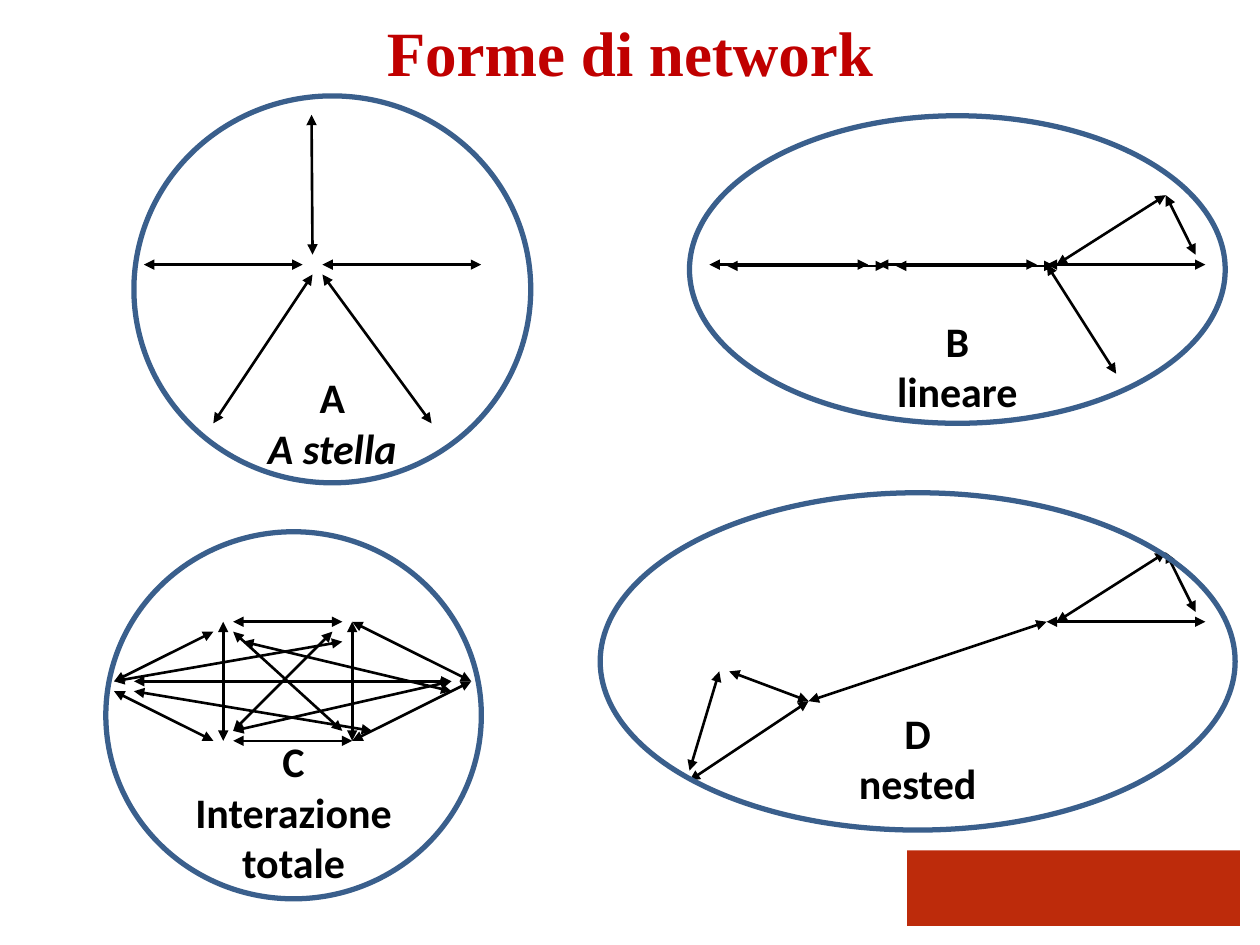
import pptx
import pptx.util
import pptx.dml.color
import pptx.enum.shapes
import pptx.enum.text
import pptx.oxml.ns
from lxml import etree

RGB = pptx.dml.color.RGBColor.from_string
SHAPE = pptx.enum.shapes.MSO_SHAPE
ANCHOR = pptx.enum.text.MSO_ANCHOR
CENTER = pptx.enum.text.PP_ALIGN.CENTER


class Theme:
    title, ring, ink, block = "C00000", "3A5F8C", "000000", "BD2B0B"
    head_font, body_font = "Times New Roman", "Calibri"
    head_size, body_size = 36, 24
    ring_line, arrow_line = 3, 1.5


class Board:
    """A slide on a fine square grid of 127 columns."""
    COLS = 127
    LEFT, TOP = 0.5, -0.33  # grid origin, in cells

    def __init__(self, deck, theme):
        self.theme = theme
        self.slide = deck.slides.add_slide(deck.slide_layouts[5])
        self.shapes = self.slide.shapes
        self.cell = deck.slide_width / self.COLS

    def size(self, cells):
        return round(cells * self.cell)

    def place(self, col, row):
        return self.size(col + self.LEFT), self.size(row + self.TOP)

    def label(self, frame, text, font, size, color):
        frame.text = text
        for par in frame.paragraphs:
            par.alignment = CENTER
            for run in par.runs:
                run.font.name, run.font.size = font, pptx.util.Pt(size)
                run.font.bold = True
                run.font.color.rgb = RGB(color)

    def title(self, text):
        look, box = self.theme, self.shapes.title
        box.left, box.top = pptx.util.Inches(0.5), 0
        box.width, box.height = pptx.util.Inches(9), pptx.util.Inches(0.99)
        frame = box.text_frame
        frame.vertical_anchor = ANCHOR.TOP
        frame.margin_top = pptx.util.Inches(0.11)
        self.label(frame, text, look.head_font, look.head_size, look.title)

    def block(self, col, row, wide, high):
        box = self.shapes.add_shape(SHAPE.RECTANGLE, *self.place(col, row),
                                    self.size(wide), self.size(high))
        box.shadow.inherit = False
        box.fill.solid()
        box.fill.fore_color.rgb = RGB(self.theme.block)
        box.line.fill.background()

    def arrow(self, start, end):
        link = self.shapes.add_connector(
            pptx.enum.shapes.MSO_CONNECTOR.STRAIGHT,
            *self.place(*start), *self.place(*end))
        link.line.color.rgb = RGB(self.theme.ink)
        link.line.width = pptx.util.Pt(self.theme.arrow_line)
        props = link._element.spPr
        stroke = props.find(pptx.oxml.ns.qn("a:ln"))
        for tip in ("a:headEnd", "a:tailEnd"):
            etree.SubElement(stroke, pptx.oxml.ns.qn(tip), type="triangle")
        etree.SubElement(props, pptx.oxml.ns.qn("a:effectLst"))

    def ring(self, col, row, wide, high, text, base):
        """Outline an oval, with its label starting at grid row base."""
        look = self.theme
        oval = self.shapes.add_shape(SHAPE.OVAL, *self.place(col, row),
                                     self.size(wide), self.size(high))
        oval.shadow.inherit = False
        oval.fill.background()
        oval.line.color.rgb = RGB(look.ring)
        oval.line.width = pptx.util.Pt(look.ring_line)
        frame = oval.text_frame
        frame.word_wrap = True
        frame.vertical_anchor = ANCHOR.TOP
        # The text area of an oval starts at 1 - 1/sqrt(2) of its radius
        frame.margin_top = self.size(base - row - high / 2 * (1 - 0.5 ** 0.5))
        frame.margin_bottom = 0
        self.label(frame, text, look.body_font, look.body_size, look.ink)
        return frame


# Arrows as (column, row) pairs
STAR = [((14, 27), (30, 27)), ((21, 43), (31, 28)), ((32, 27), (48, 27)),
        ((30.9, 11.9), (31, 26)), ((43, 43), (32, 28))]
CHAIN = [((71 + 17 * n, 27), (87 + 17 * n, 27)) for n in range(3)] + [
    ((106, 27), (117, 20)), ((117, 20), (120, 26)), ((112, 38), (105, 27))]
MESH = [((23, 63), (34, 63)), ((23, 75), (35, 75)),
        ((22, 63), (22, 75)), ((35, 63), (35, 75)),
        ((23, 74), (33, 64)), ((34, 74), (23, 64)),
        ((11, 69), (21, 64)), ((11, 70), (21, 75)),
        ((35, 63), (47, 69)), ((35, 75), (47, 69)),
        ((13, 69), (45, 69)), ((24, 65), (45, 70)),
        ((23, 74), (45, 69)), ((11, 69), (34, 65)), ((13, 70), (37, 74))]
NEST = [((81, 71), (105, 63)), ((105, 63), (121, 63)),
        ((106, 63), (117, 56)), ((117, 56), (120, 62)),
        ((81, 71), (69, 79)), ((81, 71), (73, 68)), ((69, 78), (72, 68))]
# Second pair of links, drawn over the chain
OVER = [((72.8 + 17 * n, 27.13), (88.8 + 17 * n, 27.13)) for n in range(2)]


def main():
    deck = pptx.Presentation()
    deck.slide_width = pptx.util.Inches(10)
    deck.slide_height = pptx.util.Inches(7.5)
    board = Board(deck, Theme())

    # Title and corner block
    board.title("Forme di network")
    board.block(90.94, 86.05, 33.53, 7.62)

    # Links inside the four networks
    for start, end in STAR + CHAIN + MESH + NEST:
        board.arrow(start, end)

    # Outlines with labels
    star = board.ring(13, 10, 40, 39, "A\nA stella", 37.8)
    star.paragraphs[1].runs[0].font.italic = True
    board.ring(69, 12, 54, 31, "B\nlineare", 32.1)
    board.ring(10.17, 53.93, 37.85, 37, "C\nInterazione\ntotale", 74.5)
    board.ring(60, 50, 64, 34, "D\nnested", 71.6)

    for start, end in OVER:
        board.arrow(start, end)

    deck.save("out.pptx")


if __name__ == "__main__":
    main()
